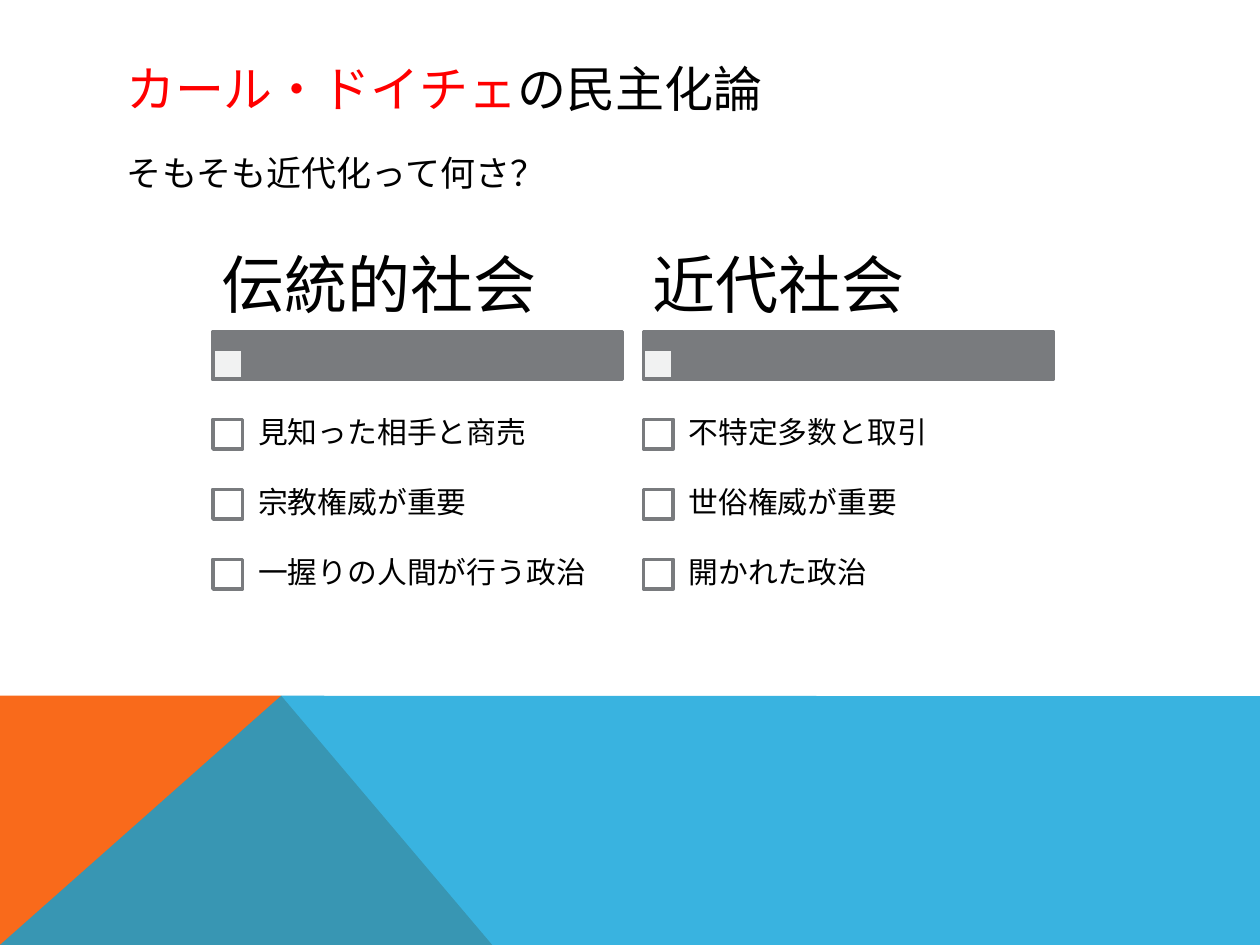
"""Build a slide comparing traditional and modern society in democratization theory."""
from lxml import etree
from pptx import Presentation
from pptx import util as u
from pptx.dml.color import RGBColor
from pptx.enum import shapes, text
from pptx.oxml import ns

THEME = {
    "font": "Noto Sans CJK JP",
    "colors": {"black": "000000", "red": "FF0000", "white": "FFFFFF",
               "gray": "797B7E", "orange": "F96A1B", "blue": "08A1D9"},
    "sizes": {"title": 28, "body": 20, "heading": 36, "item": 17},
}


def paint(shape, fill, line=None, alpha=None):
    shape.shadow.inherit = False
    shape.fill.solid()
    shape.fill.fore_color.rgb = RGBColor.from_string(THEME["colors"][fill])
    if alpha:
        color = shape.fill._xPr.find(".//" + ns.qn("a:srgbClr"))
        etree.SubElement(color, ns.qn("a:alpha"), val=str(alpha * 1000))
    if line:
        shape.line.color.rgb = RGBColor.from_string(THEME["colors"][line])
        shape.line.width = u.Pt(2)
    else:
        shape.line.fill.background()


def write(box, runs, size, frame_format, paragraph_format):
    shape = slide.shapes.add_textbox(*map(u.Pt, box))
    paragraph = shape.text_frame.paragraphs[0]
    for target, values in ((shape.text_frame, frame_format), (paragraph, paragraph_format)):
        for name, value in values.items():
            setattr(target, name, value)
    for words, color in runs:
        run = paragraph.add_run()
        run.text = words
        for name, value in {"name": THEME["font"], "size": u.Pt(THEME["sizes"][size])}.items():
            setattr(run.font, name, value)
        run.font.color.rgb = RGBColor.from_string(THEME["colors"][color])
        etree.SubElement(run._r.get_or_add_rPr(), ns.qn("a:ea"), typeface=THEME["font"])


presentation = Presentation()
presentation.slide_width, presentation.slide_height = u.Pt(720), u.Pt(540)
slide = presentation.slides.add_slide(presentation.slide_layouts[6])

bands = [
    ([(0, 540), (0, 397.6), (160.7, 397.6), (281.3, 540)], "orange", None),
    ([(0, 540), (160.7, 397.6), (720, 397.9), (720, 540)], "blue", 80),
]
for points, color, alpha in bands:
    corners = [(u.Pt(x), u.Pt(y)) for x, y in points]
    builder = slide.shapes.build_freeform(*corners[0])
    builder.add_line_segments(corners[1:], close=True)
    paint(builder.convert_to_shape(), color, alpha=alpha)

middle = {"word_wrap": True, "vertical_anchor": text.MSO_ANCHOR.MIDDLE}
write((65, 28.8, 592, 43.2), [("カール・ドイチェ", "red"), ("の民主化論", "black")],
      "title", middle, {})
write((65.5, 82.8, 592, 300), [("そもそも近代化って何さ？", "black")],
      "body", {"word_wrap": True}, {"space_before": u.Pt(8)})

sides = ("margin_left", "margin_top", "margin_right", "margin_bottom")
heading_frame = middle | dict(zip(sides, map(u.Pt, (5, 3.6, 5, 3.6))))
item_frame = middle | dict.fromkeys(sides, u.Pt(9.4))
tight = {"line_spacing": 0.9}
mark_size, row_step = 17, 40
columns = [
    (121.7, "伝統的社会", ["見知った相手と商売", "宗教権威が重要", "一握りの人間が行う政治"]),
    (367.7, "近代社会", ["不特定多数と取引", "世俗権威が重要", "開かれた政治"]),
]
for left, heading, items in columns:
    rectangles = [(189.4, 234, 27.4, "gray", None), (199.6, mark_size, mark_size, "white", 90)]
    rectangles += [(239.6 + row * row_step, mark_size, mark_size, "white", None)
                   for row in range(len(items))]
    for top, width, height, fill, alpha in rectangles:
        shape = slide.shapes.add_shape(shapes.MSO_SHAPE.RECTANGLE,
                                       *map(u.Pt, (left, top, width, height)))
        paint(shape, fill, "gray", alpha)
    write((left, 139.7, 234, 49.7), [(heading, "black")], "heading", heading_frame, tight)
    for row, item in enumerate(items):
        write((left + 16.4, 228 + row * row_step, 217.6, row_step), [(item, "black")],
              "item", item_frame, tight)

presentation.save("out.pptx")
